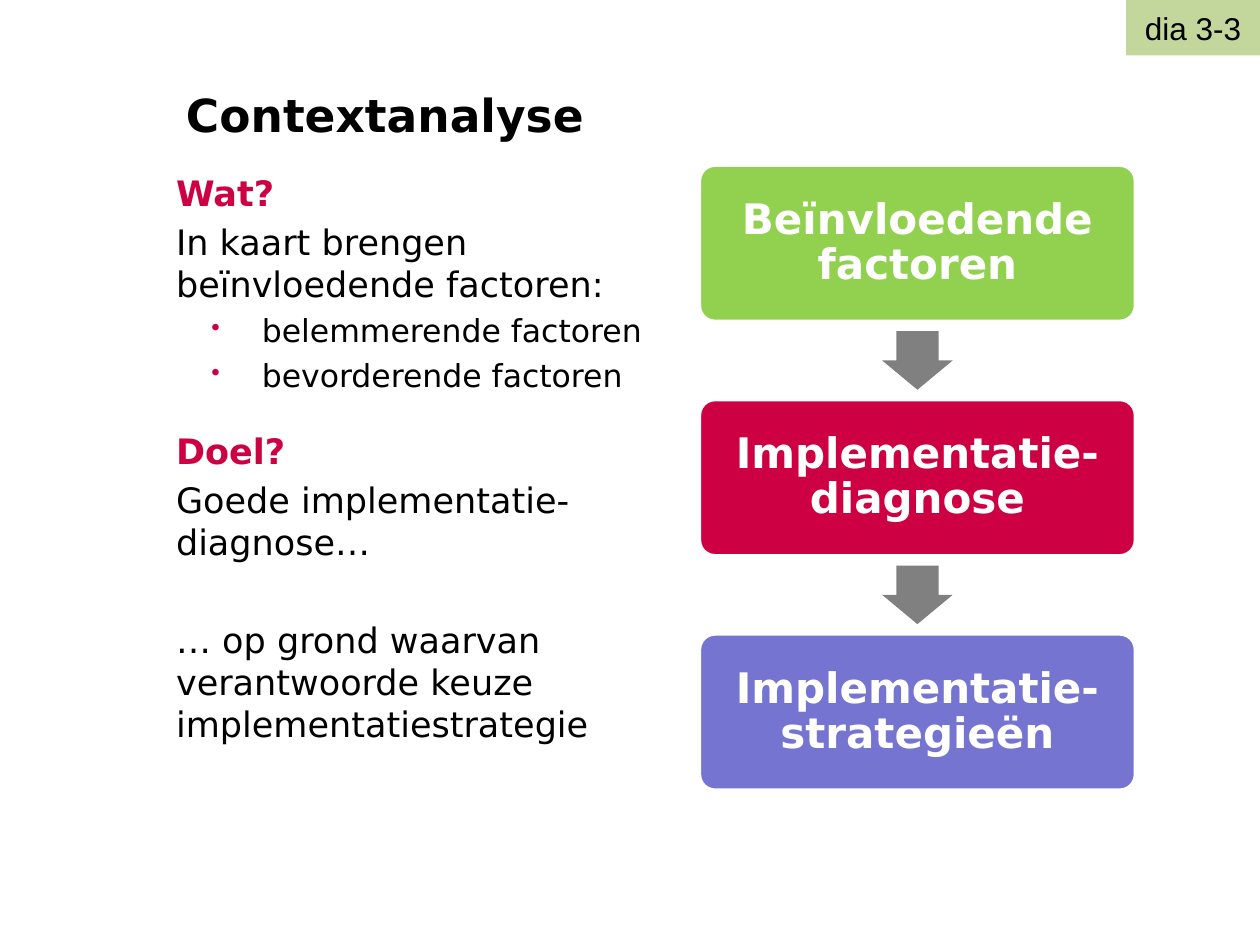
from lxml import etree
from pptx import Presentation
from pptx.dml.color import RGBColor
from pptx.enum import shapes, text
from pptx.oxml import ns
from pptx.util import Cm, Pt

BLACK = RGBColor(0x00, 0x00, 0x00)
WHITE = RGBColor(0xFF, 0xFF, 0xFF)
GREEN = RGBColor(0x92, 0xD0, 0x50)
CRIMSON = RGBColor(0xCE, 0x00, 0x44)
VIOLET = RGBColor(0x75, 0x75, 0xD1)
GREY = RGBColor(0x80, 0x80, 0x80)
SAGE = RGBColor(0xC3, 0xD6, 0x9B)

MAIN_FONT = "DejaVu Sans"
TAG_FONT = "Arial"

# Text, style, space before in points
EXPLANATION = [
    ("Wat?", "heading", 0),
    ("In kaart brengen beïnvloedende factoren:", "plain", 4),
    ("belemmerende factoren", "bullet", 4),
    ("bevorderende factoren", "bullet", 4),
    ("Doel?", "heading", 20),
    ("Goede implementatie-diagnose…", "plain", 4),
    ("… op grond waarvan verantwoorde keuze implementatiestrategie", "plain", 32),
]
STEPS = [
    ("Beïnvloedende factoren", GREEN),
    ("Implementatie-diagnose", CRIMSON),
    ("Implementatie-strategieën", VIOLET),
]


def style_runs(paragraph, size, color, bold=False, font=MAIN_FONT):
    for run in paragraph.runs:
        run.font.name = font
        run.font.size = Pt(size)
        run.font.bold = bold
        run.font.color.rgb = color


def add_bullet(paragraph):
    properties = paragraph._p.get_or_add_pPr()
    properties.set("marL", str(Cm(1.73)))
    properties.set("indent", str(Cm(-1.02)))
    color = etree.SubElement(properties, ns.qn("a:buClr"))
    etree.SubElement(color, ns.qn("a:srgbClr"), val=str(CRIMSON))
    etree.SubElement(properties, ns.qn("a:buSzPct"), val="80000")
    etree.SubElement(properties, ns.qn("a:buChar"), char="•")


def add_block(slide, preset, left, top, width, height, fill):
    block = slide.shapes.add_shape(preset, left, top, width, height)
    block.shadow.inherit = False
    block.fill.solid()
    block.fill.fore_color.rgb = fill
    block.line.fill.background()
    return block


def add_title(slide, left, top, width, height):
    title = slide.shapes.add_textbox(left, top, width, height).text_frame
    title.word_wrap = True
    title.vertical_anchor = text.MSO_ANCHOR.MIDDLE
    title.text = "Contextanalyse"
    style_runs(title.paragraphs[0], 26, BLACK, bold=True)


def add_explanation(slide, left, top, width, height):
    explanation = slide.shapes.add_textbox(left, top, width, height).text_frame
    explanation.word_wrap = True
    for index, (wording, style, gap) in enumerate(EXPLANATION):
        paragraph = explanation.add_paragraph() if index else explanation.paragraphs[0]
        paragraph.text = wording
        paragraph.space_before = Pt(gap)
        if style == "bullet":
            paragraph.level = 1
            add_bullet(paragraph)
        heading = style == "heading"
        style_runs(paragraph, 18 if style == "bullet" else 20,
                   CRIMSON if heading else BLACK, bold=heading)


def add_step(slide, left, top, width, height, wording, fill):
    step = add_block(slide, shapes.MSO_SHAPE.ROUNDED_RECTANGLE,
                     left, top, width, height, fill)
    step.adjustments[0] = 0.1
    step.line.color.rgb = WHITE
    step.line.width = Pt(2)
    label = step.text_frame
    label.word_wrap = True
    label.vertical_anchor = text.MSO_ANCHOR.MIDDLE
    label.text = wording
    label.paragraphs[0].alignment = text.PP_ALIGN.CENTER
    label.paragraphs[0].line_spacing = 0.9
    style_runs(label.paragraphs[0], 24, WHITE, bold=True)


def add_process(slide, left, top, width, height):
    step_height = Cm(3.15)
    pitch = (height - step_height) // (len(STEPS) - 1)
    arrow_width, arrow_height = Cm(1.42), Cm(1.18)
    for index, (wording, fill) in enumerate(STEPS):
        step_top = top + index * pitch
        add_step(slide, left, step_top, width, step_height, wording, fill)
        # Arrow centred in the gap above every step but the first
        if index:
            gap = pitch - step_height
            arrow = add_block(slide, shapes.MSO_SHAPE.DOWN_ARROW,
                              left + (width - arrow_width) // 2,
                              step_top - (gap + arrow_height) // 2,
                              arrow_width, arrow_height, GREY)
            arrow.adjustments[0] = 0.6
            arrow.adjustments[1] = 0.5


def add_slide_tag(slide, left, top, width, height):
    tag = add_block(slide, shapes.MSO_SHAPE.RECTANGLE, left, top, width, height, SAGE)
    label = tag.text_frame
    label.word_wrap = False
    label.vertical_anchor = text.MSO_ANCHOR.MIDDLE
    label.text = "dia 3-3"
    label.paragraphs[0].alignment = text.PP_ALIGN.CENTER
    style_runs(label.paragraphs[0], 18, BLACK, font=TAG_FONT)


def main():
    deck = Presentation()
    deck.slide_width, deck.slide_height = Cm(25.4), Cm(19.05)
    slide = deck.slides.add_slide(deck.slide_layouts[6])
    add_title(slide, Cm(3.5), Cm(0.71), Cm(20), Cm(3.18))
    add_explanation(slide, Cm(3.3), Cm(3.33), Cm(11.4), Cm(10))
    add_process(slide, Cm(14.1), Cm(3.33), Cm(8.79), Cm(12.6))
    add_slide_tag(slide, Cm(22.7), Cm(0), Cm(2.7), Cm(1.12))
    deck.save("out.pptx")


if __name__ == "__main__":
    main()
